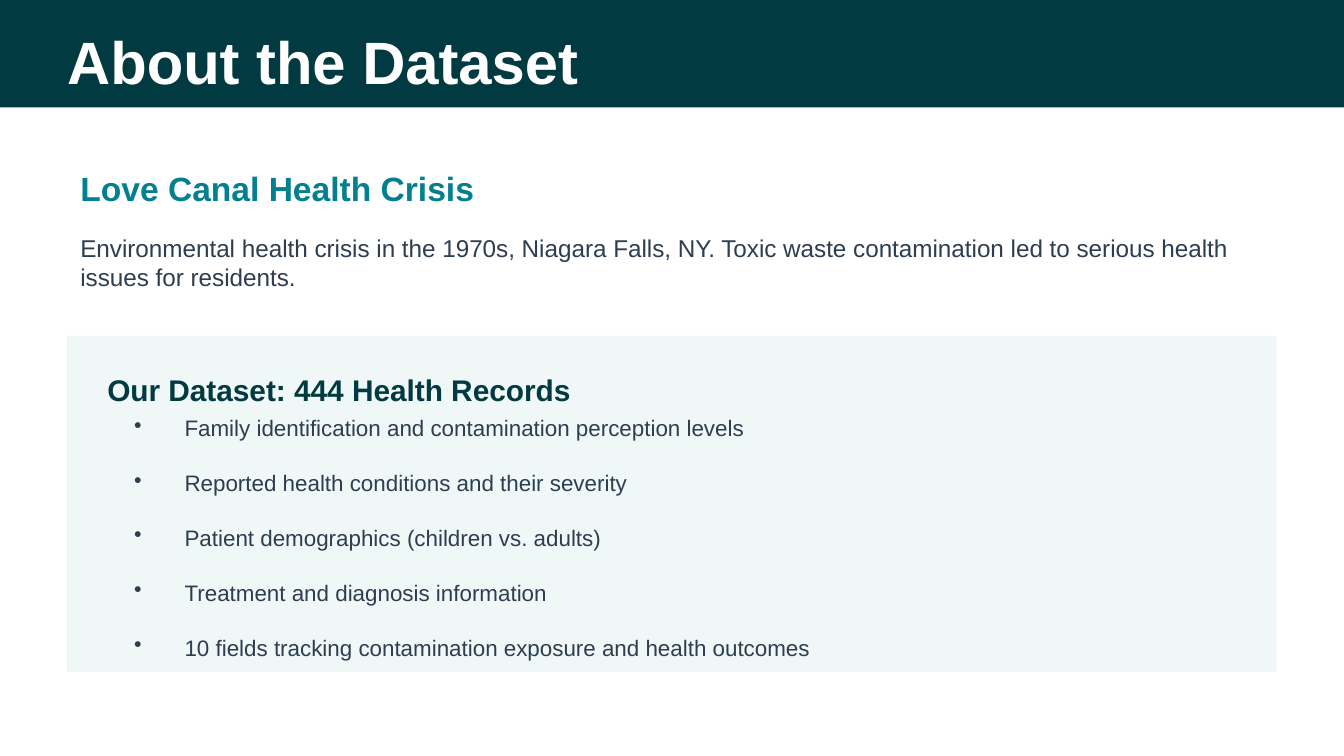
"""Build the dataset overview slide."""
from lxml.etree import SubElement
from pptx import Presentation
from pptx.dml.color import RGBColor
from pptx.enum.shapes import MSO_SHAPE
from pptx.enum.text import MSO_ANCHOR, PP_ALIGN
from pptx.oxml.ns import qn
from pptx.util import Pt

DARK, TEAL, INK, PALE, WHITE = "013A40", "028090", "2C3E50", "F0F7F7", "FFFFFF"
TITLE = "About the Dataset"
BANDS = [((0, 0, 720, 57.6), DARK), ((36, 180, 648, 180), PALE)]
TEXTS = [
    ("Love Canal Health Crisis", (36, 86.4, 648, 28.8), 18, TEAL, True),
    ("Environmental health crisis in the 1970s, Niagara Falls, NY. Toxic waste "
     "contamination led to serious health issues for residents.",
     (36, 122.4, 648, 36), 13, INK, False),
    ("Our Dataset: 444 Health Records", (50.4, 194.4, 619.2, 28.8), 16, DARK, True),
]
FIELDS = [
    "Family identification and contamination perception levels",
    "Reported health conditions and their severity",
    "Patient demographics (children vs. adults)",
    "Treatment and diagnosis information",
    "10 fields tracking contamination exposure and health outcomes",
]
INDENT, GAP = 27, 15


def color(code):
    return RGBColor.from_string(code)


def place(shape, box):
    shape.left, shape.top, shape.width, shape.height = map(Pt, box)


def write(shape, lines, size, code, bold=False):
    frame = shape.text_frame
    frame.word_wrap = True
    frame.vertical_anchor = MSO_ANCHOR.MIDDLE
    frame.text = "\n".join(lines)
    for para in frame.paragraphs:
        para.alignment = PP_ALIGN.LEFT
        for run in para.runs:
            font = run.font
            font.name, font.size, font.bold = "Arial", Pt(size), bold
            font.color.rgb = color(code)
    return frame


def add_band(slide, box, code):
    band = slide.shapes.add_shape(MSO_SHAPE.RECTANGLE, *map(Pt, box))
    band.shadow.inherit = False
    band.fill.solid()
    band.fill.fore_color.rgb = color(code)
    band.line.fill.background()
    slide.shapes.title.element.addprevious(band.element)


def add_text(slide, lines, box, size, code, bold=False):
    shape = slide.shapes.add_textbox(*map(Pt, box))
    return write(shape, lines, size, code, bold)


def add_list(slide, items, box):
    frame = add_text(slide, items, box, 12, INK)
    for index, para in enumerate(frame.paragraphs):
        para.space_before = Pt(GAP if index else 0)
        props = para._p.get_or_add_pPr()
        props.set("marL", str(Pt(INDENT)))
        props.set("indent", str(-Pt(INDENT)))
        SubElement(props, qn("a:buChar"), char="•")


def main():
    deck = Presentation()
    deck.slide_width, deck.slide_height = Pt(720), Pt(405)
    slide = deck.slides.add_slide(deck.slide_layouts[5])
    for box, code in BANDS:
        add_band(slide, box, code)
    title = slide.shapes.title
    place(title, (36, 10.8, 648, 43.2))
    frame = write(title, [TITLE], 32, WHITE, True)
    frame.margin_left = frame.margin_right = 0
    frame.margin_top = frame.margin_bottom = 0
    for text, box, size, code, bold in TEXTS:
        add_text(slide, [text], box, size, code, bold)
    add_list(slide, FIELDS, (64.8, 230.4, 604.8, 115.2))
    deck.save("out.pptx")


if __name__ == "__main__":
    main()
